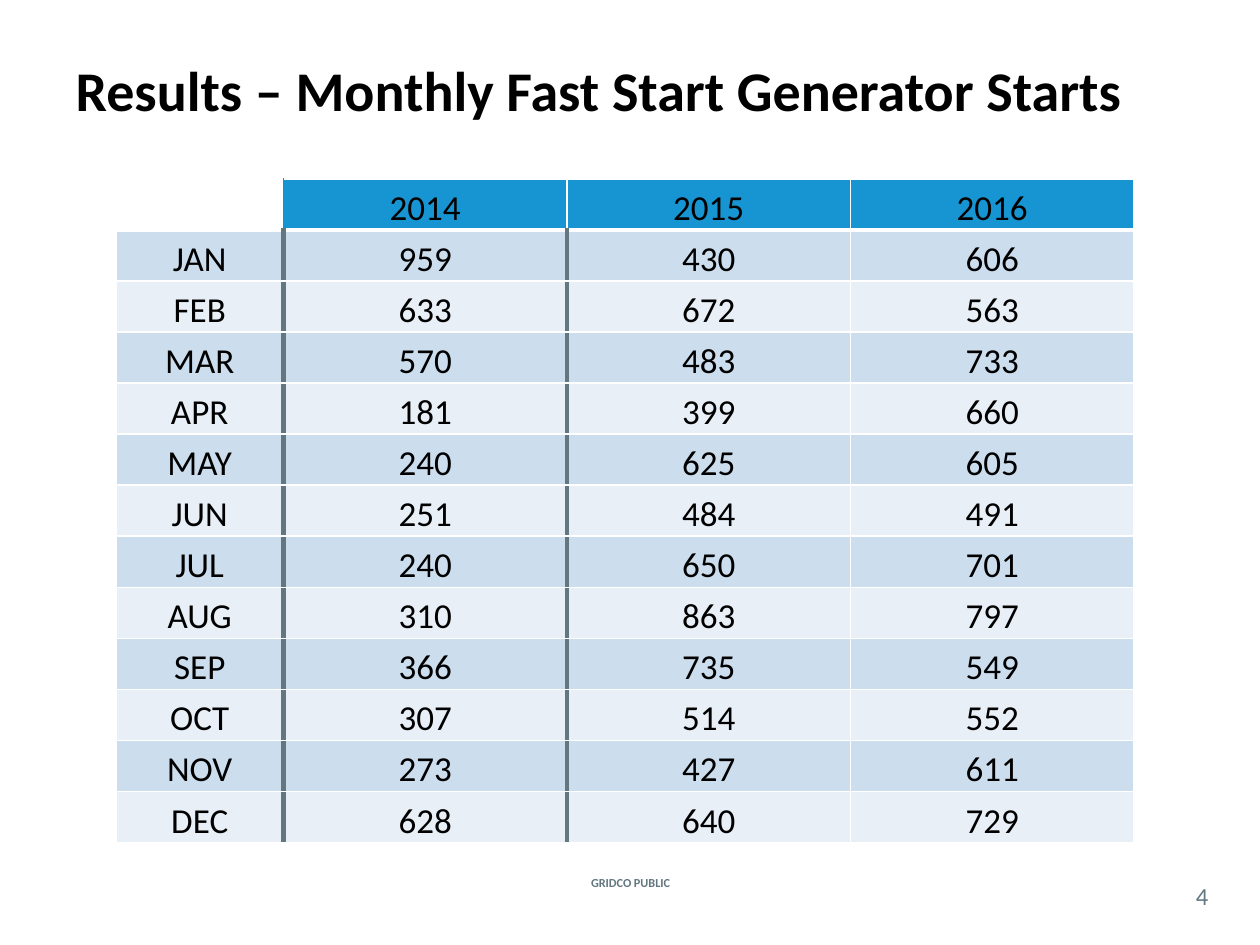
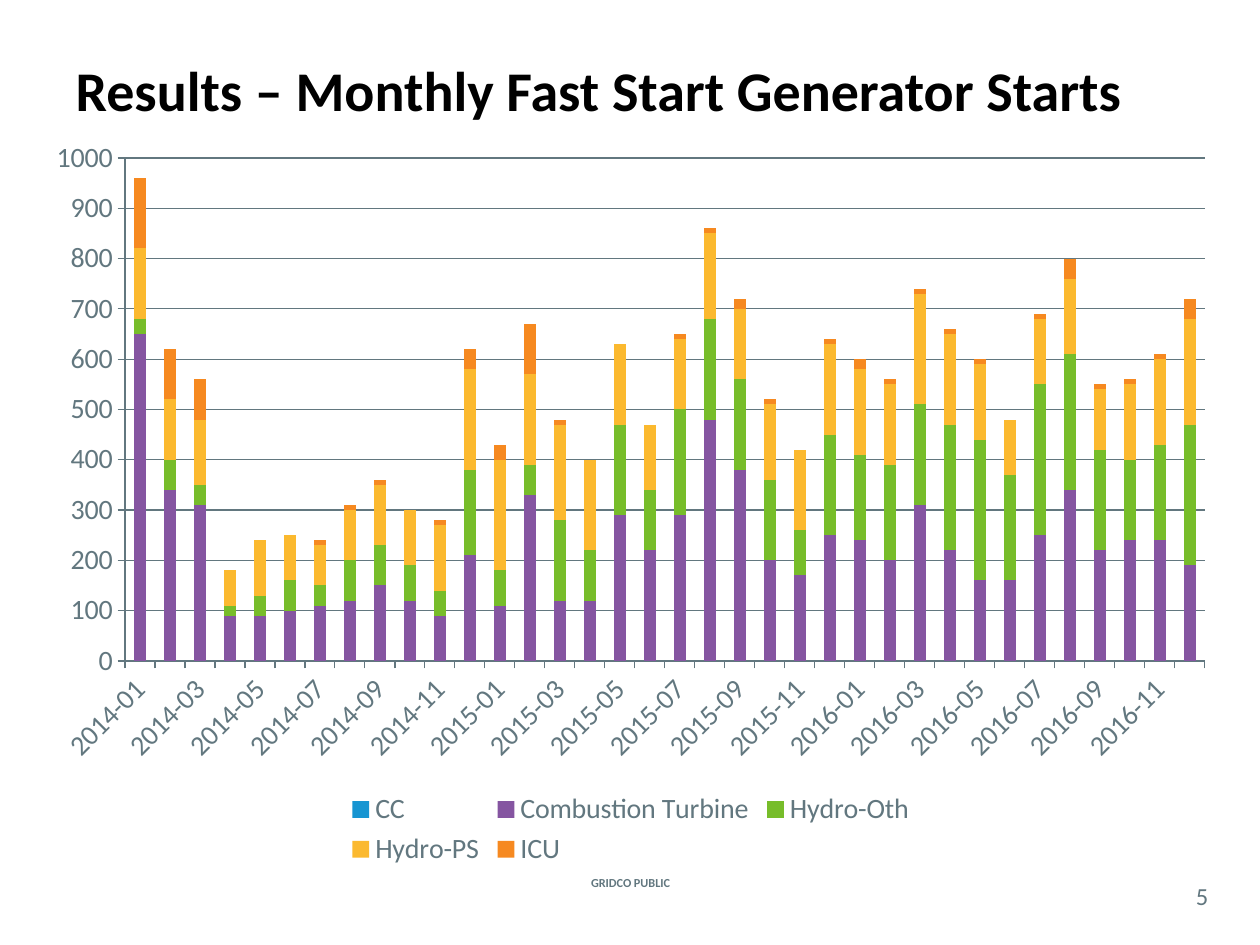
"""Build two slides of monthly fast start generator starts: a table and a stacked chart."""
from dataclasses import dataclass

from lxml import etree
from pptx import Presentation, util as u
from pptx.chart.data import CategoryChartData
from pptx.dml.color import RGBColor
from pptx.enum import chart as charts, text
from pptx.oxml.ns import qn

TITLE = "Results – Monthly Fast Start Generator Starts"
FOOTER = "GRIDCO PUBLIC"
FIRST_PAGE = 4
YEARS = [2014, 2015, 2016]
STARTS = [
    ("JAN", 959, 430, 606),
    ("FEB", 633, 672, 563),
    ("MAR", 570, 483, 733),
    ("APR", 181, 399, 660),
    ("MAY", 240, 625, 605),
    ("JUN", 251, 484, 491),
    ("JUL", 240, 650, 701),
    ("AUG", 310, 863, 797),
    ("SEP", 366, 735, 549),
    ("OCT", 307, 514, 552),
    ("NOV", 273, 427, 611),
    ("DEC", 628, 640, 729),
]
STARTS_BY_TYPE = [
    ("CC", "1795D2", [0] * 36),
    ("Combustion Turbine", "8555A1", [
        650, 340, 310, 90, 90, 100, 110, 120, 150, 120, 90, 210,
        110, 330, 120, 120, 290, 220, 290, 480, 380, 200, 170, 250,
        240, 200, 310, 220, 160, 160, 250, 340, 220, 240, 240, 190]),
    ("Hydro-Oth", "77BD2A", [
        30, 60, 40, 20, 40, 60, 40, 80, 80, 70, 50, 170,
        70, 60, 160, 100, 180, 120, 210, 200, 180, 160, 90, 200,
        170, 190, 200, 250, 280, 210, 300, 270, 200, 160, 190, 280]),
    ("Hydro-PS", "FBB92F", [
        140, 120, 130, 70, 110, 90, 80, 100, 120, 110, 130, 200,
        220, 180, 190, 180, 160, 130, 140, 170, 140, 150, 160, 180,
        170, 160, 220, 180, 150, 110, 130, 150, 120, 150, 170, 210]),
    ("ICU", "F68920", [
        140, 100, 80, 0, 0, 0, 10, 10, 10, 0, 10, 40,
        30, 100, 10, 0, 0, 0, 10, 10, 20, 10, 0, 10,
        20, 10, 10, 10, 10, 0, 10, 40, 10, 10, 10, 40]),
]


@dataclass(frozen=True)
class Theme:
    """Colours and type sizes shared by the slides."""
    font: str = "Calibri"
    ink: str = "000000"
    slate: str = "62777F"
    white: str = "FFFFFF"
    header: str = "1795D2"
    bands: tuple = ("CCDDEE", "E8EFF7")
    title_size: int = 32
    table_size: int = 20
    chart_size: int = 16
    number_size: int = 14
    footer_size: int = 7


THEME = Theme()


def style_font(font, size, color, bold=False):
    """Apply the theme font with a size, colour and weight."""
    font.name, font.size, font.bold = THEME.font, u.Pt(size), bold
    font.color.rgb = RGBColor.from_string(color)


def write(paragraph, words, size, color, bold=False, align=text.PP_ALIGN.CENTER):
    """Add one styled run to an aligned paragraph."""
    paragraph.alignment = align
    run = paragraph.add_run()
    run.text = str(words)
    style_font(run.font, size, color, bold)


def add_label(slide, box, words, size, bold=False):
    """Add a centred slate label without insets."""
    frame = slide.shapes.add_textbox(*map(u.Inches, box)).text_frame
    frame.word_wrap = True
    frame.vertical_anchor = text.MSO_ANCHOR.MIDDLE
    frame.margin_left = frame.margin_right = frame.margin_top = frame.margin_bottom = 0
    write(frame.paragraphs[0], words, size, THEME.slate, bold)


def add_results_slide(presentation, page):
    """Add a slide with the shared title, footer and page number."""
    slide = presentation.slides.add_slide(presentation.slide_layouts[5])
    add_label(slide, (4.27, 6.92, 1.47, 0.17), FOOTER, THEME.footer_size, bold=True)
    add_label(slide, (9.33, 6.96, 0.42, 0.29), page, THEME.number_size)
    title = slide.shapes.title
    title.left, title.top, title.width, title.height = map(u.Inches, (0.5, 0.08, 9, 1.25))
    frame = title.text_frame
    frame.vertical_anchor = text.MSO_ANCHOR.MIDDLE
    write(frame.paragraphs[0], TITLE, THEME.title_size, THEME.ink, True, text.PP_ALIGN.LEFT)
    return slide


def add_border(cell, side, color, points):
    """Draw one side of a cell: L, R, T or B."""
    line = etree.SubElement(cell._tc.get_or_add_tcPr(), qn(f"a:ln{side}"), w=str(u.Pt(points)))
    fill = etree.SubElement(line, qn("a:solidFill"))
    etree.SubElement(fill, qn("a:srgbClr"), val=color)


def divider(row, edge):
    """Return colour and width of the vertical line at a column edge."""
    if edge == 1:
        return THEME.slate, 3 if row else 1
    if edge == 2 and row:
        return THEME.slate, 2.25
    return THEME.white, 1


def format_cell(cell, row, column, value):
    """Set borders, fill and text of one table cell."""
    add_border(cell, "L", *divider(row, column))
    add_border(cell, "R", *divider(row, column + 1))
    add_border(cell, "T", THEME.white, 3 if row == 1 else 1)
    add_border(cell, "B", THEME.white, 1 if row else 3)
    if row or column:
        cell.fill.solid()
        color = THEME.bands[(row - 1) % 2] if row else THEME.header
        cell.fill.fore_color.rgb = RGBColor.from_string(color)
    else:
        cell.fill.background()
    cell.vertical_anchor = text.MSO_ANCHOR.BOTTOM
    cell.margin_left = cell.margin_right = cell.margin_top = u.Inches(0.01)
    cell.margin_bottom = 0
    if value:
        write(cell.text_frame.paragraphs[0], value, THEME.table_size, THEME.ink)


def add_starts_table(slide):
    """Add the table of starts by month and year."""
    rows = [("", *YEARS), *STARTS]
    box = map(u.Inches, (0.92, 1.42, 8.08, 5.27))
    table = slide.shapes.add_table(len(rows), len(rows[0]), *box).table
    table.first_row = table.horz_banding = False
    for column, width in zip(table.columns, [1.33] + [2.25] * len(YEARS)):
        column.width = u.Inches(width)
    for row, values in enumerate(rows):
        for column, value in enumerate(values):
            format_cell(table.cell(row, column), row, column, value)


def format_axis(axis):
    """Give an axis slate lines, outside ticks and theme labels."""
    axis.major_tick_mark = charts.XL_TICK_MARK.OUTSIDE
    axis.minor_tick_mark = charts.XL_TICK_MARK.NONE
    axis.format.line.color.rgb = RGBColor.from_string(THEME.slate)
    axis.format.line.width = u.Pt(0.75)
    style_font(axis.tick_labels.font, THEME.chart_size, THEME.slate)


def add_starts_chart(slide):
    """Add the stacked columns of starts by generator type."""
    data = CategoryChartData()
    data.categories = [f"{year}-{month:02}" for year in YEARS for month in range(1, 13)]
    for name, _, values in STARTS_BY_TYPE:
        data.add_series(name, values)
    box = map(u.Inches, (0.26, 1, 9.49, 5.92))
    chart = slide.shapes.add_chart(charts.XL_CHART_TYPE.COLUMN_STACKED, *box, data).chart
    style_font(chart.font, THEME.chart_size, THEME.slate)
    chart.has_title = False
    chart.has_legend = True
    chart.legend.position = charts.XL_LEGEND_POSITION.BOTTOM
    chart.legend.include_in_layout = False
    style_font(chart.legend.font, THEME.chart_size, THEME.slate)
    format_axis(chart.category_axis)
    value_axis = chart.value_axis
    format_axis(value_axis)
    value_axis.minimum_scale, value_axis.maximum_scale, value_axis.major_unit = 0, 1000, 100
    value_axis.has_major_gridlines = True
    gridline = value_axis.major_gridlines.format.line
    gridline.color.rgb = RGBColor.from_string(THEME.slate)
    gridline.width = u.Pt(0.75)
    plot = chart.plots[0]
    plot.gap_width, plot.overlap, plot.vary_by_categories = 150, 100, False
    for series, (_, color, _) in zip(plot.series, STARTS_BY_TYPE):
        series.format.fill.solid()
        series.format.fill.fore_color.rgb = RGBColor.from_string(color)


def main():
    """Build and save the presentation."""
    presentation = Presentation()
    presentation.slide_width, presentation.slide_height = u.Inches(10), u.Inches(7.5)
    for page, add_content in enumerate((add_starts_table, add_starts_chart), FIRST_PAGE):
        add_content(add_results_slide(presentation, page))
    presentation.save("out.pptx")


if __name__ == "__main__":
    main()
